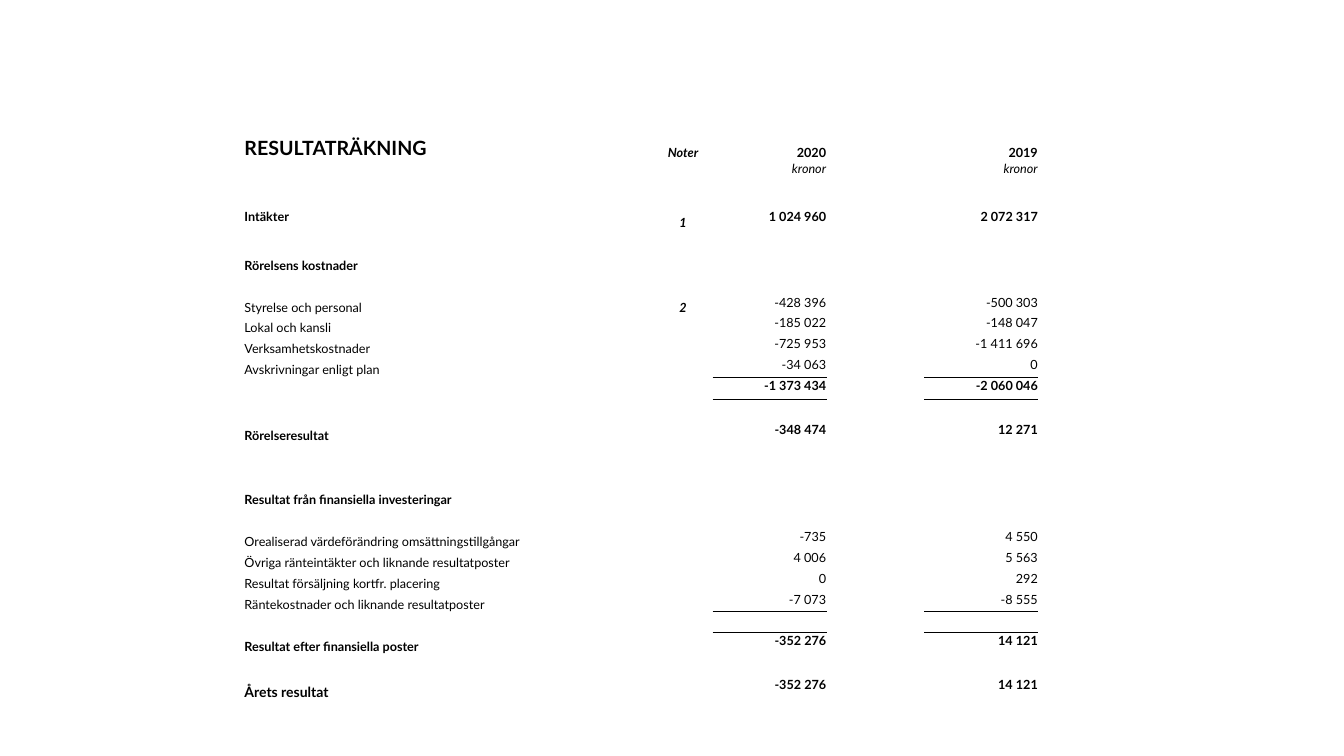
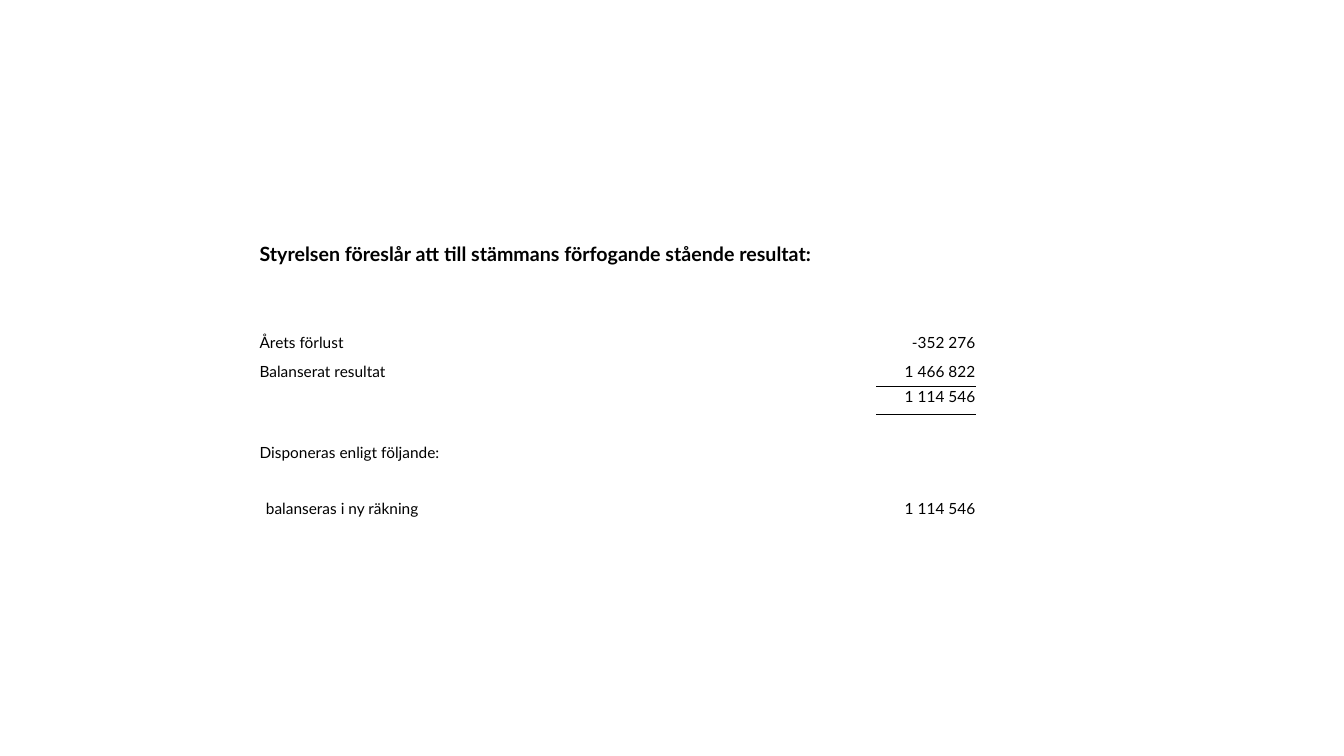
from dataclasses import dataclass

from lxml import etree
from pptx import Presentation
from pptx.dml.color import RGBColor
from pptx.enum.text import MSO_ANCHOR, PP_ALIGN
from pptx.oxml.ns import qn
from pptx.util import Emu, Pt

SCALE = 5715
FONT = "Lato"
INK = "000000"
PAPER = "FFFFFF"
RULE_WIDTH = Pt(0.5)
PLAIN_TABLE_STYLE = "{2D5ABB26-0587-4C30-8999-92F81FD0307C}"
LEFT, CENTER, RIGHT = PP_ALIGN.LEFT, PP_ALIGN.CENTER, PP_ALIGN.RIGHT
TOP, BOTTOM = MSO_ANCHOR.TOP, MSO_ANCHOR.BOTTOM

TITLE_SIZE = 14
SMALL_SIZE = 9
BODY_SIZE = 11
LINE, GAP, WIDE = 33, 35, 38


@dataclass
class Row:
    """One line of a statement, with its amounts in column order."""

    height: int
    label: str = ""
    amounts: tuple = ()
    note: str = ""
    bold: bool = False
    italic: bool = False
    label_size: int = 0
    label_anchor: MSO_ANCHOR = BOTTOM
    amount_anchor: MSO_ANCHOR = TOP
    ruled: bool = False
    label_span: int = 1
    indent: int = 0


INCOME_COLUMNS = (650, 94, 181, 155, 181)
INCOME_ROWS = (
    Row(46),
    Row(40, "RESULTATRÄKNING", ("2020", "2019"), "Noter", bold=True,
        label_size=TITLE_SIZE, label_anchor=TOP, amount_anchor=BOTTOM),
    Row(WIDE, amounts=("kronor", "kronor"), italic=True),
    Row(WIDE),
    Row(GAP, "Intäkter", ("1 024 960", "2 072 317"), "1", bold=True, label_anchor=TOP),
    Row(LINE),
    Row(GAP, "Rörelsens kostnader", bold=True),
    Row(LINE),
    Row(LINE, "Styrelse och personal", ("-428 396", "-500 303"), "2"),
    Row(LINE, "Lokal och kansli", ("-185 022", "-148 047")),
    Row(LINE, "Verksamhetskostnader", ("-725 953", "-1 411 696")),
    Row(LINE, "Avskrivningar enligt plan", ("-34 063", "0"), ruled=True),
    Row(GAP, amounts=("-1 373 434", "-2 060 046"), bold=True),
    Row(GAP),
    Row(GAP, "Rörelseresultat", ("-348 474", "12 271"), bold=True),
    Row(LINE),
    Row(LINE),
    Row(GAP, "Resultat från finansiella investeringar", bold=True),
    Row(GAP),
    Row(LINE, "Orealiserad värdeförändring omsättningstillgångar", ("-735", "4 550"),
        label_span=2),
    Row(LINE, "Övriga ränteintäkter och liknande resultatposter", ("4 006", "5 563")),
    Row(LINE, "Resultat försäljning kortfr. placering", ("0", "292")),
    Row(LINE, "Räntekostnader och liknande resultatposter", ("-7 073", "-8 555"),
        ruled=True),
    Row(LINE),
    Row(GAP, "Resultat efter finansiella poster", ("-352 276", "14 121"), bold=True),
    Row(GAP),
    Row(WIDE, "Årets resultat", ("-352 276", "14 121"), bold=True, label_size=10),
    Row(LINE),
)

PROPOSAL_COLUMNS = (798, 131, 51, 158)
PROPOSAL_ROWS = (
    Row(114, "Styrelsen föreslår att till stämmans förfogande stående resultat:",
        bold=True, label_size=TITLE_SIZE, label_anchor=TOP, label_span=4),
    Row(30),
    Row(46, "Årets förlust", ("-352 276",), label_anchor=TOP),
    Row(39, "Balanserat resultat", ("1 466 822",), label_anchor=TOP, ruled=True),
    Row(45, amounts=("1 114 546",)),
    Row(44),
    Row(90, "Disponeras enligt följande:", label_anchor=TOP),
    Row(45, "balanseras i ny räkning", ("1 114 546",), label_anchor=TOP, indent=10),
)


def px(length):
    """Turn a length in px into EMU."""
    return Emu(length * SCALE)


def color(value):
    """Turn a hex string into a colour."""
    return RGBColor.from_string(value)


def write_cell(cell, text="", size=SMALL_SIZE, bold=False, italic=False,
               alignment=LEFT, anchor=TOP, indent=0):
    """Style a cell and put its text in."""
    cell.fill.background()
    cell.margin_left, cell.margin_right = px(1 + indent), px(1)
    cell.margin_top, cell.margin_bottom = px(1), 0
    cell.vertical_anchor = anchor
    paragraph = cell.text_frame.paragraphs[0]
    paragraph.text = text
    paragraph.alignment = alignment
    font = paragraph.font
    font.name, font.size = FONT, Pt(size)
    font.bold, font.italic = bold, italic
    font.color.rgb = color(INK)


def rule_cell(cell, side):
    """Draw a thin rule on one side of a cell, lnT or lnB."""
    line = etree.Element(qn(f"a:{side}"), w=str(RULE_WIDTH))
    fill = etree.SubElement(line, qn("a:solidFill"))
    etree.SubElement(fill, qn("a:srgbClr"), val=INK)
    cell._tc.get_or_add_tcPr().insert(0, line)


def add_plain_table(slide, left, top, columns, heights):
    """Add a table without grid or bands."""
    frame = slide.shapes.add_table(len(heights), len(columns), px(left), px(top),
                                   px(sum(columns)), px(sum(heights)))
    table = frame.table
    table.first_row = table.horz_banding = False
    table._tbl.tblPr.find(qn("a:tableStyleId")).text = PLAIN_TABLE_STYLE
    for column, width in zip(table.columns, columns):
        column.width = px(width)
    for row, height in zip(table.rows, heights):
        row.height = px(height)
    return table


def add_statement(slide, left, top, columns, rows, amount_columns, size):
    """Add a financial statement with labels, notes and amounts."""
    table = add_plain_table(slide, left, top, columns, [row.height for row in rows])
    for index, row in enumerate(rows):
        for column in range(len(columns)):
            write_cell(table.cell(index, column))
        label = table.cell(index, 0)
        if row.label:
            write_cell(label, row.label, row.label_size or size, row.bold,
                       anchor=row.label_anchor, indent=row.indent)
        if row.label_span > 1:
            label.merge(table.cell(index, row.label_span - 1))
        if row.note:
            write_cell(table.cell(index, 1), row.note, size, True, True, CENTER, BOTTOM)
        for column, amount in zip(amount_columns, row.amounts):
            write_cell(table.cell(index, column), amount, size, row.bold, row.italic,
                       RIGHT, row.amount_anchor)
            if row.ruled:
                rule_cell(table.cell(index, column), "lnB")
                rule_cell(table.cell(index + 1, column), "lnT")


def add_blank_slide(presentation):
    """Add a slide on the blank layout with a plain background."""
    slide = presentation.slides.add_slide(presentation.slide_layouts[6])
    slide.background.fill.solid()
    slide.background.fill.fore_color.rgb = color(PAPER)
    return slide


def main():
    """Build the income statement and the proposal."""
    presentation = Presentation()
    presentation.slide_width, presentation.slide_height = px(2133), px(1200)
    add_statement(add_blank_slide(presentation), 387, 169, INCOME_COLUMNS,
                  INCOME_ROWS, (2, 4), SMALL_SIZE)
    add_statement(add_blank_slide(presentation), 411, 384, PROPOSAL_COLUMNS,
                  PROPOSAL_ROWS, (3,), BODY_SIZE)
    presentation.save("out.pptx")


if __name__ == "__main__":
    main()
